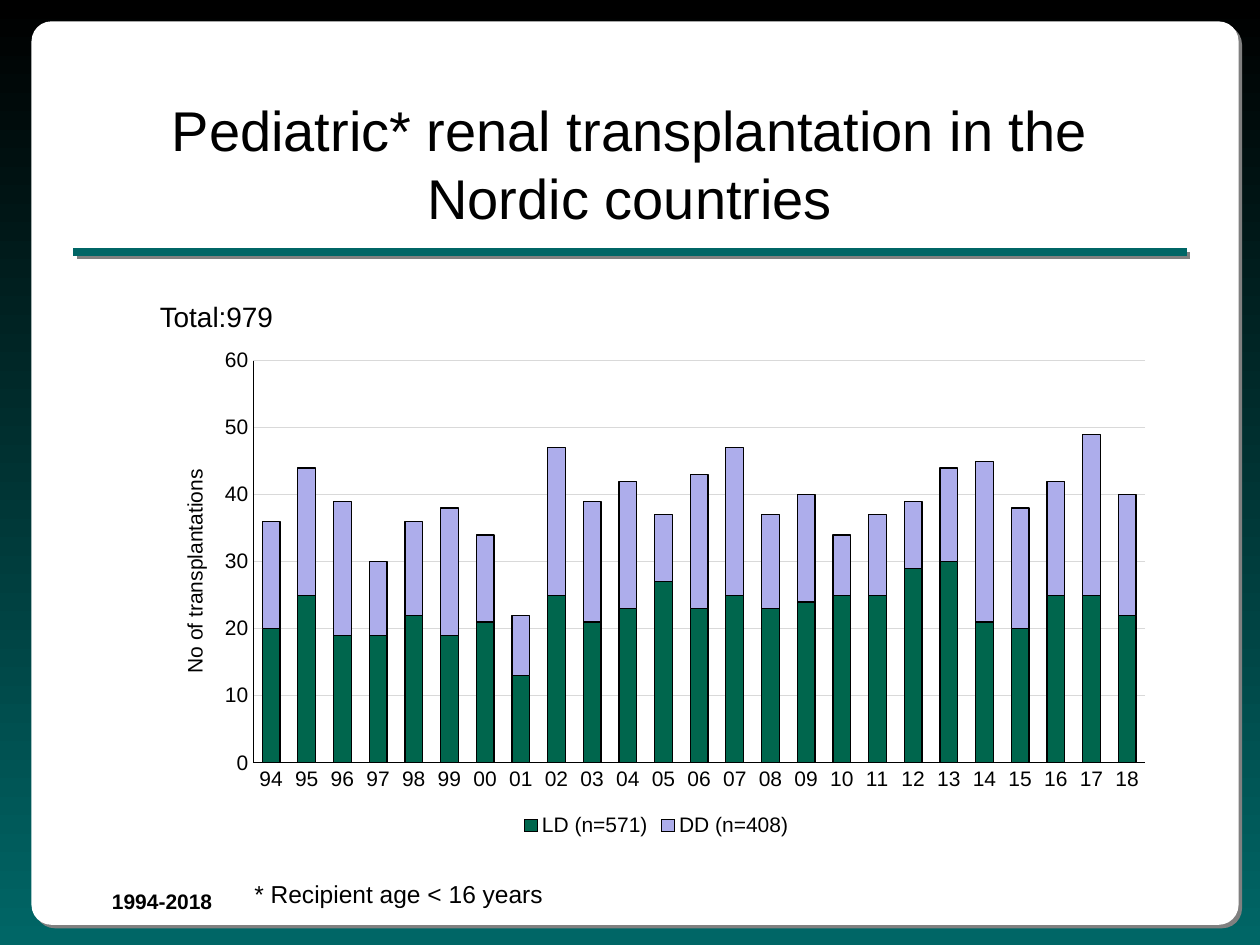
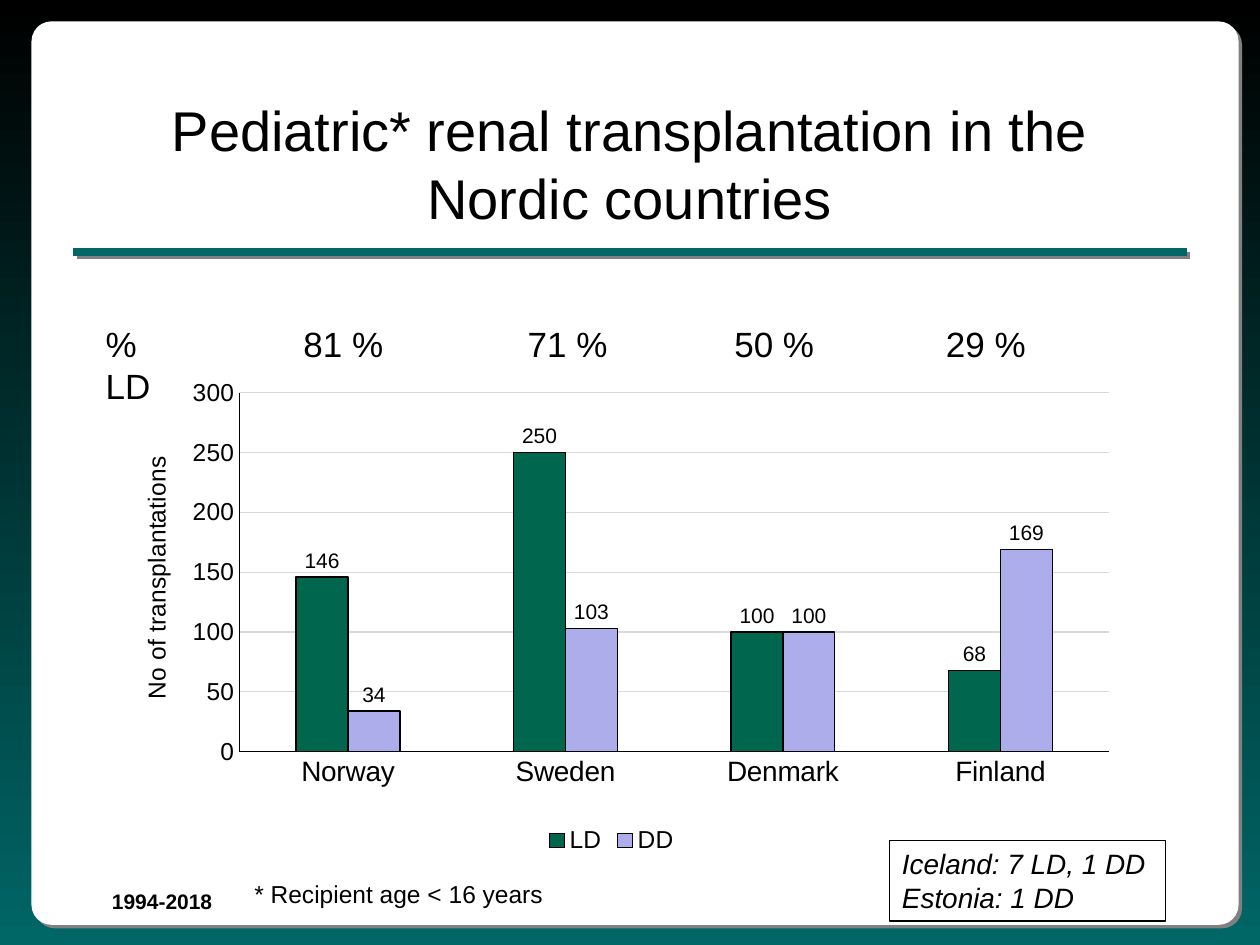
from dataclasses import dataclass

from lxml.etree import SubElement
from pptx import Presentation
from pptx.chart.data import CategoryChartData
from pptx.dml.color import RGBColor
from pptx.enum.chart import XL_CHART_TYPE as ChartType
from pptx.enum.chart import XL_LABEL_POSITION as LabelPos
from pptx.enum.chart import XL_LEGEND_POSITION as LegendPos
from pptx.enum.chart import XL_TICK_MARK as TickMark
from pptx.enum.shapes import MSO_CONNECTOR as Connector
from pptx.enum.shapes import MSO_SHAPE as Shape
from pptx.enum.text import MSO_ANCHOR as Anchor
from pptx.enum.text import MSO_AUTO_SIZE as AutoSize
from pptx.enum.text import PP_ALIGN as Align
from pptx.oxml import parse_xml
from pptx.oxml.ns import nsdecls, qn
from pptx.util import Inches, Pt

# Shared look
FONT = "Arial"
BLACK = RGBColor(0x00, 0x00, 0x00)
WHITE = RGBColor(0xFF, 0xFF, 0xFF)
TEAL = RGBColor(0x00, 0x66, 0x66)
GRID = RGBColor(0xD9, 0xD9, 0xD9)
LD_GREEN = RGBColor(0x00, 0x66, 0x4D)
DD_LILAC = RGBColor(0xAD, 0xAD, 0xEB)
THIN = Pt(0.75)

TITLE = "Pediatric* renal transplantation in the Nordic countries"
AXIS_TITLE = "No of transplantations"


@dataclass
class Label:
    text: str
    left: float
    top: float
    width: float
    height: float
    size: int
    bold: bool = False
    italic: bool = False
    wrap: bool = False
    boxed: bool = False


@dataclass
class ColumnChart:
    kind: ChartType
    box: tuple[float, float, float, float]
    plot: tuple[float, float, float, float]
    title_at: tuple[float, float]
    categories: list[str]
    series: dict[str, list[int]]
    gap: int
    overlap: int
    top_value: int
    step: int
    category_size: int
    value_size: int
    labelled: bool = False


FOOTNOTE = Label("* Recipient age < 16 years", 1.92, 6.93, 2.5, 0.34, 14)
PERIOD = Label("1994-2018", 0.79, 7, 1.47, 0.3, 12, bold=True, wrap=True)

YEARLY = ColumnChart(
    kind=ChartType.COLUMN_STACKED,
    box=(1.17, 2.7, 8.08, 3.98),
    plot=(0.104, 0.041, 0.876, 0.802),
    title_at=(0.03, 0.25),
    categories=[f"{year % 100:02}" for year in range(1994, 2019)],
    series={
        "LD (n=571)": [20, 25, 19, 19, 22, 19, 21, 13, 25, 21, 23, 27, 23,
                       25, 23, 24, 25, 25, 29, 30, 21, 20, 25, 25, 22],
        "DD (n=408)": [16, 19, 20, 11, 14, 19, 13, 9, 22, 18, 19, 10, 20,
                       22, 14, 16, 9, 12, 10, 14, 24, 18, 17, 24, 18],
    },
    gap=100, overlap=100, top_value=60, step=10,
    category_size=12, value_size=12,
)

BY_COUNTRY = ColumnChart(
    kind=ChartType.COLUMN_CLUSTERED,
    box=(0.75, 2.94, 8.21, 3.88),
    plot=(0.14, 0.046, 0.841, 0.734),
    title_at=(0.04, 0.167),
    categories=["Norway", "Sweden", "Denmark", "Finland"],
    series={"LD": [146, 250, 100, 68], "DD": [34, 103, 100, 169]},
    gap=219, overlap=0, top_value=300, step=50,
    category_size=16, value_size=14, labelled=True,
)


def style_font(font, size: int) -> None:
    font.name = FONT
    font.size = Pt(size)
    font.color.rgb = BLACK


def style_line(line, color: RGBColor = BLACK, width=THIN) -> None:
    line.color.rgb = color
    line.width = width


def add_shadow(shape) -> None:
    shape._element.spPr.append(parse_xml(
        f'<a:effectLst {nsdecls("a")}>'
        '<a:outerShdw dist="35560" dir="2700000" algn="ctr" rotWithShape="0">'
        '<a:srgbClr val="808080"/></a:outerShdw></a:effectLst>'))


def add_label(s, label: Label):
    box = s.shapes.add_textbox(*map(Inches, (label.left, label.top, label.width, label.height)))
    tf = box.text_frame
    tf.word_wrap = label.wrap
    tf.auto_size = AutoSize.SHAPE_TO_FIT_TEXT
    tf.text = label.text
    for p in tf.paragraphs:
        for r in p.runs:
            style_font(r.font, label.size)
            r.font.bold = label.bold
            r.font.italic = label.italic
    if label.boxed:
        style_line(box.line)
    return box


def set_layout(parent, inner: bool, **fractions: float) -> None:
    """Give a chart part a manual place, as fractions of the chart."""
    layout = parent.find(qn("c:layout"))
    if layout is None:
        layout = parse_xml(f'<c:layout {nsdecls("c")}/>')
        parent.insert(0, layout)
    manual = SubElement(layout, qn("c:manualLayout"))
    settings = {"layoutTarget": "inner"} if inner else {}
    settings |= {"xMode": "edge", "yMode": "edge"} | fractions
    for name, value in settings.items():
        SubElement(manual, qn(f"c:{name}")).set("val", str(value))


def style_axis(axis, size: int) -> None:
    axis.major_tick_mark = axis.minor_tick_mark = TickMark.NONE
    style_font(axis.tick_labels.font, size)
    style_line(axis.format.line)


def add_column_chart(s, spec_: ColumnChart) -> None:
    data = CategoryChartData()
    data.categories = spec_.categories
    for name, values in spec_.series.items():
        data.add_series(name, values)
    chart = s.shapes.add_chart(spec_.kind, *map(Inches, spec_.box), data).chart
    style_font(chart.font, 10)
    chart.has_title = False
    chart.has_legend = True
    chart.legend.position = LegendPos.BOTTOM
    chart.legend.include_in_layout = False
    style_font(chart.legend.font, spec_.value_size)

    # Axes
    style_axis(chart.category_axis, spec_.category_size)
    axis = chart.value_axis
    style_axis(axis, spec_.value_size)
    axis.minimum_scale, axis.maximum_scale = 0, spec_.top_value
    axis.major_unit = spec_.step
    axis.has_major_gridlines = True
    style_line(axis.major_gridlines.format.line, GRID)
    tf = axis.axis_title.text_frame
    tf.text = AXIS_TITLE
    r = tf.paragraphs[0].runs[0]
    style_font(r.font, spec_.value_size)
    r.font.bold = False
    title = axis.axis_title._element
    body = title.find(".//" + qn("a:bodyPr"))
    body.set("rot", "-5400000")
    body.set("vert", "horz")
    set_layout(title, False, **dict(zip("xy", spec_.title_at)))
    set_layout(chart._chartSpace.chart.plotArea, True, **dict(zip("xywh", spec_.plot)))

    # Columns
    plot = chart.plots[0]
    plot.vary_by_categories = False
    plot.gap_width, plot.overlap = spec_.gap, spec_.overlap
    for series, color in zip(plot.series, (LD_GREEN, DD_LILAC)):
        series.format.fill.solid()
        series.format.fill.fore_color.rgb = color
        style_line(series.format.line)
        if spec_.labelled:
            labels = series.data_labels
            labels.show_value = True
            labels.position = LabelPos.OUTSIDE_END
            style_font(labels.font, 12)


def move_frame_to_layout(s) -> None:
    """Draw the panel, rule and period, and keep them on the layout."""
    layout = s.slide_layout
    fill = layout.background.fill
    fill.gradient()
    fill.gradient_angle = 270
    for stop, color in zip(fill.gradient_stops, (BLACK, TEAL)):
        stop.color.rgb = color

    panel = s.shapes.add_shape(Shape.ROUNDED_RECTANGLE, *map(Inches, (0.25, 0.17, 9.58, 7.17)))
    panel.adjustments[0] = 0.022
    panel.fill.solid()
    panel.fill.fore_color.rgb = WHITE
    panel.line.fill.background()
    add_shadow(panel)

    period = add_label(s, PERIOD)
    rule = s.shapes.add_connector(Connector.STRAIGHT, *map(Inches, (0.58, 2, 9.42, 2)))
    style_line(rule.line, TEAL, Pt(4.5))
    add_shadow(rule)

    for number, shape in enumerate((panel, period, rule), 101):
        element = shape._element
        element.find(".//" + qn("p:cNvPr")).set("id", str(number))
        layout.shapes._spTree.append(element)


def add_slide(prs):
    s = prs.slides.add_slide(prs.slide_layouts[5])
    title = s.shapes.title
    title.left, title.top, title.width, title.height = map(Inches, (0.75, 0.67, 8.5, 1.25))
    tf = title.text_frame
    tf.text = TITLE
    tf.word_wrap = True
    tf.auto_size = AutoSize.NONE
    tf.vertical_anchor = Anchor.MIDDLE
    p = tf.paragraphs[0]
    p.alignment = Align.CENTER
    style_font(p.runs[0].font, 32)
    return s


def main() -> None:
    prs = Presentation()
    prs.slide_width, prs.slide_height = Inches(10), Inches(7.5)

    # Transplantations per year
    s = add_slide(prs)
    move_frame_to_layout(s)
    add_column_chart(s, YEARLY)
    add_label(s, Label("Total:979", 1.17, 2.33, 1.3, 0.37, 16, wrap=True))
    add_label(s, FOOTNOTE)

    # Transplantations per country
    s = add_slide(prs)
    add_column_chart(s, BY_COUNTRY)
    shares = {"% LD": 0.74, "81 %": 2.31, "71 %": 4.09, "50 %": 5.73, "29 %": 7.41}
    for text, left in shares.items():
        add_label(s, Label(text, left, 2.51, 0.84, 0.44, 20))
    add_label(s, FOOTNOTE)
    add_label(s, Label("Iceland: 7 LD, 1 DD\nEstonia: 1 DD", 7.06, 6.67, 2.19, 0.64, 16,
                       italic=True, wrap=True, boxed=True))

    prs.save("out.pptx")


if __name__ == "__main__":
    main()
